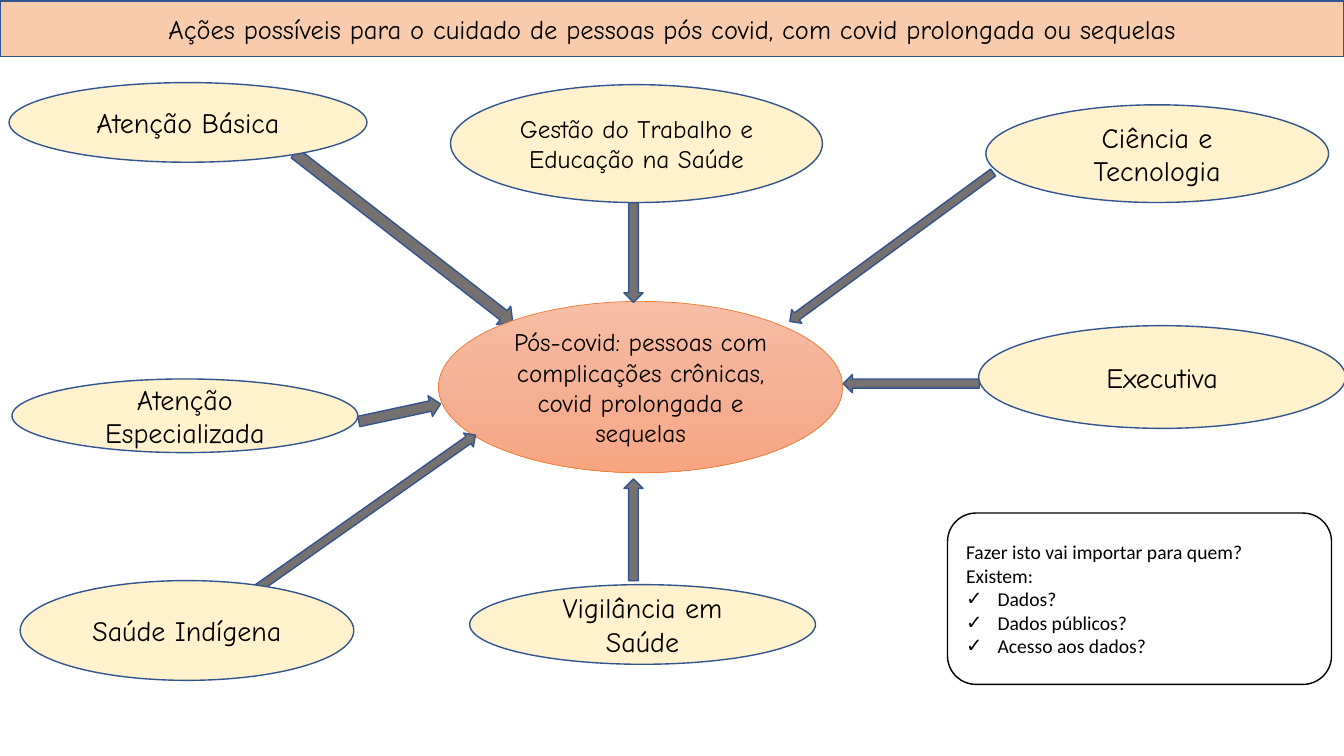
import copy
import math

from lxml import etree
from pptx import Presentation
from pptx import util as u
from pptx.dml.color import RGBColor
from pptx.enum import shapes, text
from pptx.oxml.ns import qn


def colour(value):
    return RGBColor.from_string(value)


class Diagram:
    font = "Comic Neue"
    list_font = "Calibri"
    ink = "000000"
    outline = "325491"
    arrow_fill = "767171"
    topic_fill = "FFF2CC"
    title_fill = "F8CBAD"

    def __init__(self, slide):
        self.slide = slide

    def paint(self, shape, fill, line, width=1):
        if fill:
            shape.fill.solid()
            shape.fill.fore_color.rgb = colour(fill)
        else:
            shape.fill.background()
        shape.line.color.rgb = colour(line)
        shape.line.width = u.Pt(width)

    def place(self, shape, left, top, width, height):
        shape.left, shape.top = u.Pt(left), u.Pt(top)
        shape.width, shape.height = u.Pt(width), u.Pt(height)

    def label(self, shape, content, size, font, align):
        frame = shape.text_frame
        frame.text = content
        frame.word_wrap = True
        frame.auto_size = text.MSO_AUTO_SIZE.NONE
        frame.vertical_anchor = text.MSO_ANCHOR.MIDDLE
        for paragraph in frame.paragraphs:
            paragraph.alignment = align
            paragraph.space_before = u.Pt(0)
            for run in paragraph.runs:
                run.font.size = u.Pt(size)
                run.font.name = font
                run.font.color.rgb = colour(self.ink)

    def preset(self, kind, left, top, width, height, fill, line):
        shape = self.slide.shapes.add_shape(
            kind, u.Pt(left), u.Pt(top), u.Pt(width), u.Pt(height))
        shape.shadow.inherit = False
        self.paint(shape, fill, line)
        return shape

    def title(self, content, box):
        shape = self.slide.shapes.title
        self.place(shape, *box)
        self.paint(shape, self.title_fill, self.outline)
        self.label(shape, content, 19, self.font, text.PP_ALIGN.CENTER)

    def topic(self, content, box, size=20):
        shape = self.preset(shapes.MSO_SHAPE.OVAL, *box, self.topic_fill, self.outline)
        self.label(shape, content, size, self.font, text.PP_ALIGN.CENTER)
        return shape

    def centre(self, content, box, stop_colours, line):
        shape = self.topic(content, box, 18)
        shape.line.color.rgb = colour(line)
        shape.line.width = u.Pt(0.5)
        shape.fill.gradient()
        shape.fill.gradient_angle = 270
        stop_list = shape._element.spPr.find(".//" + qn("a:gsLst"))
        stop_list.insert(1, copy.deepcopy(stop_list[0]))
        for stop, value, position in zip(shape.fill.gradient_stops, stop_colours, (0, 0.5, 1)):
            stop.color.rgb = colour(value)
            stop.position = position

    def arrow(self, start, end, thickness):
        run, rise = end[0] - start[0], end[1] - start[1]
        length = math.hypot(run, rise)
        left = (start[0] + end[0] - length) / 2
        top = (start[1] + end[1] - thickness) / 2
        shape = self.preset(shapes.MSO_SHAPE.RIGHT_ARROW, left, top, length, thickness,
                            self.arrow_fill, self.outline)
        shape.rotation = math.degrees(math.atan2(rise, run))

    def checklist(self, intro, items, box, inset=6):
        left, top, width, height = box
        self.preset(shapes.MSO_SHAPE.ROUNDED_RECTANGLE, *box, None, self.ink)
        body = self.slide.placeholders[1]
        self.slide.shapes._spTree.append(body._element)
        self.place(body, left + inset, top, width - 2 * inset, height)
        self.label(body, "\n".join(intro + items), 14, self.list_font, text.PP_ALIGN.LEFT)
        for index, paragraph in enumerate(body.text_frame.paragraphs):
            properties = paragraph._p.get_or_add_pPr()
            checked = index >= len(intro)
            indent = u.Pt(22.5) if checked else 0
            properties.set("marL", str(indent))
            properties.set("indent", str(-indent))
            if checked:
                etree.SubElement(properties, qn("a:buChar")).set("char", "✓")
            else:
                etree.SubElement(properties, qn("a:buNone"))


def main():
    presentation = Presentation()
    presentation.slide_width, presentation.slide_height = u.Pt(960), u.Pt(540)
    diagram = Diagram(presentation.slides.add_slide(presentation.slide_layouts[1]))

    diagram.title("Ações possíveis para o cuidado de pessoas pós covid, "
                  "com covid prolongada ou sequelas", (0, 0.7, 960, 39.6))

    for start, end, thickness in (
        ((210.5, 109.5), (366.3, 230.3), 16.6),
        ((709.4, 123.2), (564.2, 229.6), 12.2),
        ((699.5, 274), (602.3, 274), 13),
    ):
        diagram.arrow(start, end, thickness)

    diagram.centre("Pós-covid: pessoas com complicações crônicas, covid prolongada e sequelas",
                   (313.2, 215.3, 288.7, 122.4), ("F7BDA5", "F5B196", "F8A582"), "ED7D31")

    for start, end, thickness in (
        ((256.3, 301.1), (314.7, 288.5), 15.1),
        ((182.4, 421.4), (339.6, 310.8), 12.2),
        ((452.5, 414.8), (452.5, 342), 13.7),
        ((452.5, 144.8), (452.5, 216), 13.7),
    ):
        diagram.arrow(start, end, thickness)

    diagram.topic("Gestão do Trabalho e Educação na Saúde", (321.8, 60.5, 265.7, 84.2), 18)
    for name, box in (
        ("Atenção Básica", (6.5, 59, 255.6, 56.9)),
        ("Atenção Especializada", (8.6, 270.7, 247, 52.6)),
        ("Saúde Indígena", (14.4, 414.7, 238.3, 71.3)),
        ("Vigilância em Saúde", (335.5, 417.6, 247, 56.9)),
        ("Ciência e Tecnologia", (704.2, 74.9, 244.8, 69.8)),
        ("Executiva", (699.1, 232.6, 262.1, 73.4)),
    ):
        diagram.topic(name, box)

    diagram.checklist(["Fazer isto vai importar para quem?", "Existem:"],
                      ["Dados?", "Dados públicos?", "Acesso aos dados?"],
                      (676.8, 366.5, 274.3, 122.4))

    presentation.save("out.pptx")


if __name__ == "__main__":
    main()
